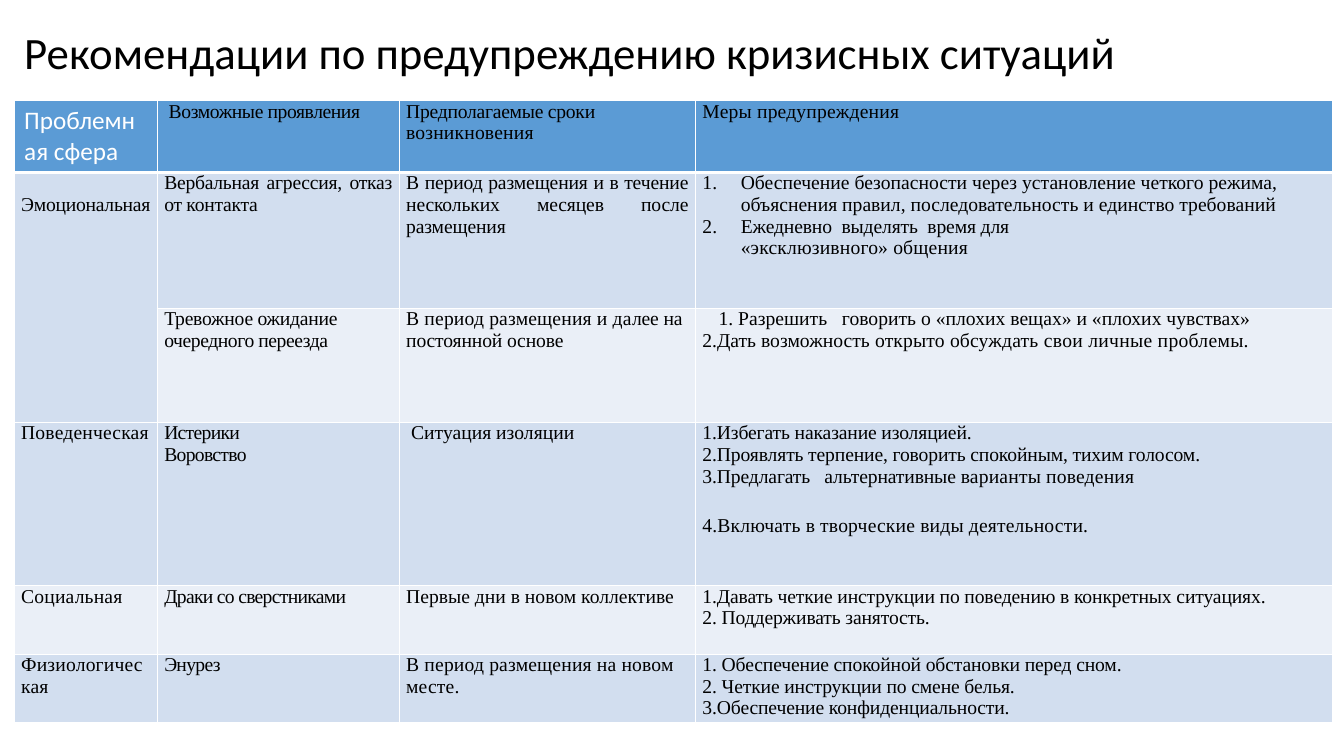
import copy

import lxml.etree
import pptx
import pptx.dml.color
import pptx.enum.text
import pptx.oxml.ns
import pptx.util

COLOURS = {
    "header": "5B9BD5",
    "band": "D2DEEF",
    "light": "EAEFF7",
    "border": "FFFFFF",
    "text": "000000",
    "corner": "FFFFFF",
}
SLIDE_WIDTH = pptx.util.Inches(13.33)
SLIDE_HEIGHT = pptx.util.Inches(7.5)
LEFT_SHARE = 0.0105
COLUMN_SHARES = [0.1065, 0.18, 0.2205, 0.474]
ROW_SHARES = [0.0907, 0.18, 0.1507, 0.216, 0.0907, 0.0907]
ROW_FILLS = ["header", "band", "light", "band", "light", "band"]
JUSTIFY = pptx.enum.text.PP_ALIGN.JUSTIFY
BODY_FONT = {"name": "Times New Roman", "size": pptx.util.Pt(14)}
CELL_MARGINS = {
    "margin_left": pptx.util.Inches(0.07),
    "margin_right": pptx.util.Inches(0.07),
    "margin_top": 0,
    "margin_bottom": 0,
}


def line(*runs, before=0, after=0, alignment=None, indent=0, numbered=False):
    spacing = {
        "space_before": pptx.util.Pt(before),
        "space_after": pptx.util.Pt(after),
        "alignment": alignment,
    }
    return {"runs": runs, "format": spacing, "indent": indent, "numbered": numbered}


def closing(*runs):
    return line(*runs, after=20.1)


TABLE_ROWS = [
    [
        [line(("Проблемная сфера", 0))],
        [line((" Возможные проявления", -0.3), before=6.7)],
        [closing(("Предполагаемые сроки ", -0.2), ("возникновения", 0.1))],
        [closing(("Меры предупреждения", 0.1))],
    ],
    [
        [line((" Эмоциональная ", -0.2), alignment=JUSTIFY)],
        [line(("Вербальная агрессия, отказ от контакта", -0.2), alignment=JUSTIFY)],
        [line(("В период размещения и в течение нескольких месяцев после размещения", -0.1),
              before=0.5, alignment=JUSTIFY)],
        [
            line(("Обеспечение безопасности через установление четкого режима, "
                  "объяснения правил, последовательность и единство требований", 0),
                 before=1.2, numbered=True),
            line(("Ежедневно  выделять  время для\n", -0.1),
                 ("«эксклюзивного» общения", 0.1), numbered=True),
        ],
    ],
    [
        [],
        [line(("Тревожное ожидание ", -0.2), ("очередного переезда", -0.3))],
        [line(("В период размещения и да", 0.1), ("лее на постоянной основе", -0.1))],
        [
            line(("1. Разрешить   говорить о «плохих вещах» и «плохих чувствах»", 0),
                 before=0.7, indent=0.16),
            closing(("2.", -0.1), ("Дать возможность ", 0), ("открыто обсуждать ", 0.1),
                    ("свои личные проблемы.", 0.2)),
        ],
    ],
    [
        [closing(("Поведенческая", 0.1))],
        [line(("Истерики", -0.5), before=0.2), line(("Воровство", -0.5))],
        [closing((" Ситуация изоляции", 0))],
        [
            line(("1.Избегать наказание изоляцией.", -0.1)),
            line(("2.Проявлять терпение, говорить спокойным, тихим голосом.", -0.1)),
            closing(("3.Предлагать   альтернативные ", -0.1), ("варианты поведения", 0.1)),
            closing(("4.Включать в творческие виды деятельности.", 0.1)),
        ],
    ],
    [
        [closing(("Социальная", 0.1))],
        [line(("Драки со сверстниками", -0.5), before=0.2)],
        [closing(("Первые дни в новом коллективе", 0))],
        [
            line(("1.Давать четкие инструкции по поведению в конкретных ситуациях.", -0.1)),
            line(("2. Поддерживать занятость.", -0.1)),
        ],
    ],
    [
        [closing(("Физиологическая", 0.1))],
        [line(("Энурез", -0.5), before=0.2)],
        [closing(("В период размещения на новом месте.", 0.1))],
        [
            line(("1. Обеспечение спокойной обстановки перед сном.", -0.1)),
            line(("2. Четкие инструкции по смене белья.", -0.1)),
            line(("3.Обеспечение конфиденциальности.", -0.1)),
        ],
    ],
]


def apply_format(target, values):
    for name, value in values.items():
        setattr(target, name, value)


def colour(name):
    return pptx.dml.color.RGBColor.from_string(COLOURS[name])


def child(parent, tag, **attributes):
    return lxml.etree.SubElement(parent, pptx.oxml.ns.qn(tag), attributes)


def style_font(font, values, colour_name):
    apply_format(font, {"bold": False, **values})
    font.color.rgb = colour(colour_name)


def add_title(slide, text):
    title = slide.shapes.title
    apply_format(title, {
        "left": int(SLIDE_WIDTH * LEFT_SHARE),
        "top": int(SLIDE_HEIGHT * 0.0227),
        "width": int(SLIDE_WIDTH * 0.9745),
        "height": int(SLIDE_HEIGHT * 0.1),
    })
    apply_format(title.text_frame, {
        "text": text,
        "word_wrap": True,
        "auto_size": pptx.enum.text.MSO_AUTO_SIZE.NONE,
        "vertical_anchor": pptx.enum.text.MSO_ANCHOR.MIDDLE,
    })
    paragraph = title.text_frame.paragraphs[0]
    apply_format(paragraph, {"alignment": pptx.enum.text.PP_ALIGN.LEFT, "line_spacing": 0.9})
    style_font(paragraph.runs[0].font, {"name": "Calibri", "size": pptx.util.Pt(32)}, "text")


def write_paragraph(paragraph, content, font_values, colour_name):
    apply_format(paragraph, content["format"])
    properties = paragraph._p.get_or_add_pPr()
    if content["numbered"]:
        hanging = pptx.util.Inches(0.38)
        properties.set("marL", str(hanging))
        properties.set("indent", str(-hanging))
        child(properties, "a:buFont", typeface="+mj-lt")
        child(properties, "a:buAutoNum", type="arabicPeriod")
    elif content["indent"]:
        properties.set("indent", str(pptx.util.Inches(content["indent"])))
    for text, spacing in content["runs"]:
        run = paragraph.add_run()
        run.text = text.rstrip("\n")
        style_font(run.font, font_values, colour_name)
        run_properties = run._r.get_or_add_rPr()
        run_properties.set("spc", str(round(spacing * 100)))
        if text.endswith("\n"):
            paragraph.add_line_break()
            paragraph._p[-1].append(copy.deepcopy(run_properties))


def add_borders(cell, is_header):
    properties = cell._tc.get_or_add_tcPr()
    for side in "LRTB":
        points = 3 if is_header and side == "B" else 1
        border = child(properties, f"a:ln{side}", w=str(pptx.util.Pt(points)))
        child(child(border, "a:solidFill"), "a:srgbClr", val=COLOURS["border"])


def fill_cell(cell, contents, row_number, is_corner):
    add_borders(cell, row_number == 0)
    cell.fill.solid()
    cell.fill.fore_color.rgb = colour(ROW_FILLS[row_number])
    font_values, colour_name = BODY_FONT, "text"
    if is_corner:
        font_values, colour_name = {"name": "Calibri", "size": pptx.util.Pt(18)}, "corner"
    else:
        apply_format(cell, CELL_MARGINS)
    for number, content in enumerate(contents):
        frame = cell.text_frame
        paragraph = frame.add_paragraph() if number else frame.paragraphs[0]
        write_paragraph(paragraph, content, font_values, colour_name)


def add_recommendations(slide):
    widths = [int(SLIDE_WIDTH * share) for share in COLUMN_SHARES]
    heights = [int(SLIDE_HEIGHT * share) for share in ROW_SHARES]
    table = slide.shapes.add_table(
        len(heights), len(widths), int(SLIDE_WIDTH * LEFT_SHARE), int(SLIDE_HEIGHT * 0.1333),
        sum(widths), sum(heights)).table
    for column, width in zip(table.columns, widths):
        column.width = width
    for row, height in zip(table.rows, heights):
        row.height = height
    table.cell(1, 0).merge(table.cell(2, 0))
    for row_number, row in enumerate(TABLE_ROWS):
        for column_number, contents in enumerate(row):
            fill_cell(table.cell(row_number, column_number), contents, row_number,
                      row_number == column_number == 0)


def main():
    presentation = pptx.Presentation()
    apply_format(presentation, {"slide_width": SLIDE_WIDTH, "slide_height": SLIDE_HEIGHT})
    slide = presentation.slides.add_slide(presentation.slide_layouts[5])
    add_title(slide, "Рекомендации по предупреждению кризисных ситуаций")
    add_recommendations(slide)
    presentation.save("out.pptx")


if __name__ == "__main__":
    main()
